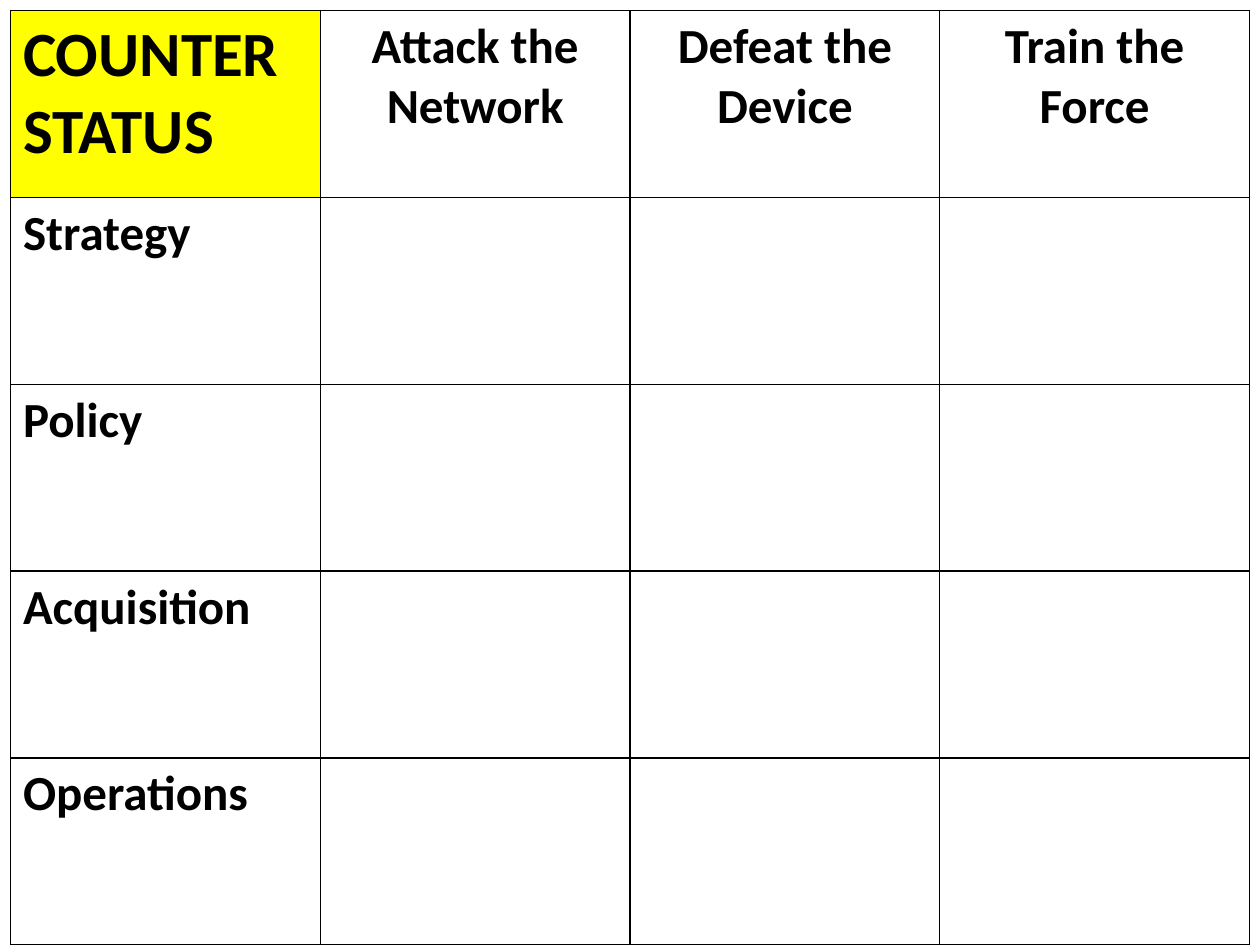
"""Build a counter status matrix slide."""
from dataclasses import dataclass

from lxml.etree import SubElement
from pptx import Presentation
from pptx.dml.color import RGBColor
from pptx.enum.text import PP_ALIGN
from pptx.oxml.ns import qn
from pptx.util import Pt


@dataclass(frozen=True)
class Theme:
    font: str = "Calibri"
    ink: str = "000000"
    accent: str = "FFFF00"
    corner_size: int = 36
    label_size: int = 28
    border: float = 1


THEME = Theme()
CORNER = "COUNTER\nSTATUS"
COLUMNS = ["Attack the Network", "Defeat the Device", "Train the Force"]
ROWS = ["Strategy", "Policy", "Acquisition", "Operations"]


def write_text(tf, text, size=THEME.label_size, align=PP_ALIGN.LEFT, bold=True):
    tf.text = text
    for p in tf.paragraphs:
        p.alignment = align
        p.font.size = Pt(size)
        for r in p.runs:
            r.font.name = THEME.font
            r.font.size = Pt(size)
            r.font.bold = bold
            r.font.color.rgb = RGBColor.from_string(THEME.ink)


def add_borders(cell):
    tc_pr = cell._tc.get_or_add_tcPr()
    for i, side in enumerate(("lnL", "lnR", "lnT", "lnB")):
        ln = tc_pr.makeelement(qn(f"a:{side}"), {"w": str(Pt(THEME.border))})
        tc_pr.insert(i, ln)
        fill = SubElement(ln, qn("a:solidFill"))
        SubElement(fill, qn("a:srgbClr"), val=THEME.ink)


def add_grid(s, left, top, width, height, n_rows, n_cols):
    table = s.shapes.add_table(
        n_rows, n_cols, Pt(left), Pt(top), Pt(width), Pt(height)
    ).table
    table.first_row = table.horz_banding = False
    for row in table.rows:
        row.height = Pt(height / n_rows)
    for cell in table.iter_cells():
        cell.fill.background()
        add_borders(cell)
    return table


def fill_labels(table):
    corner = table.cell(0, 0)
    corner.fill.solid()
    corner.fill.fore_color.rgb = RGBColor.from_string(THEME.accent)
    write_text(corner.text_frame, CORNER, size=THEME.corner_size)
    for i, text in enumerate(COLUMNS, 1):
        write_text(table.cell(0, i).text_frame, text, align=PP_ALIGN.CENTER)
    for i, text in enumerate(ROWS, 1):
        write_text(table.cell(i, 0).text_frame, text)


def main():
    prs = Presentation()
    prs.slide_width, prs.slide_height = Pt(720), Pt(540)
    s = prs.slides.add_slide(prs.slide_layouts[6])
    table = add_grid(s, 6, 6, 708, 534, len(ROWS) + 1, len(COLUMNS) + 1)
    fill_labels(table)
    prs.save("out.pptx")


if __name__ == "__main__":
    main()
